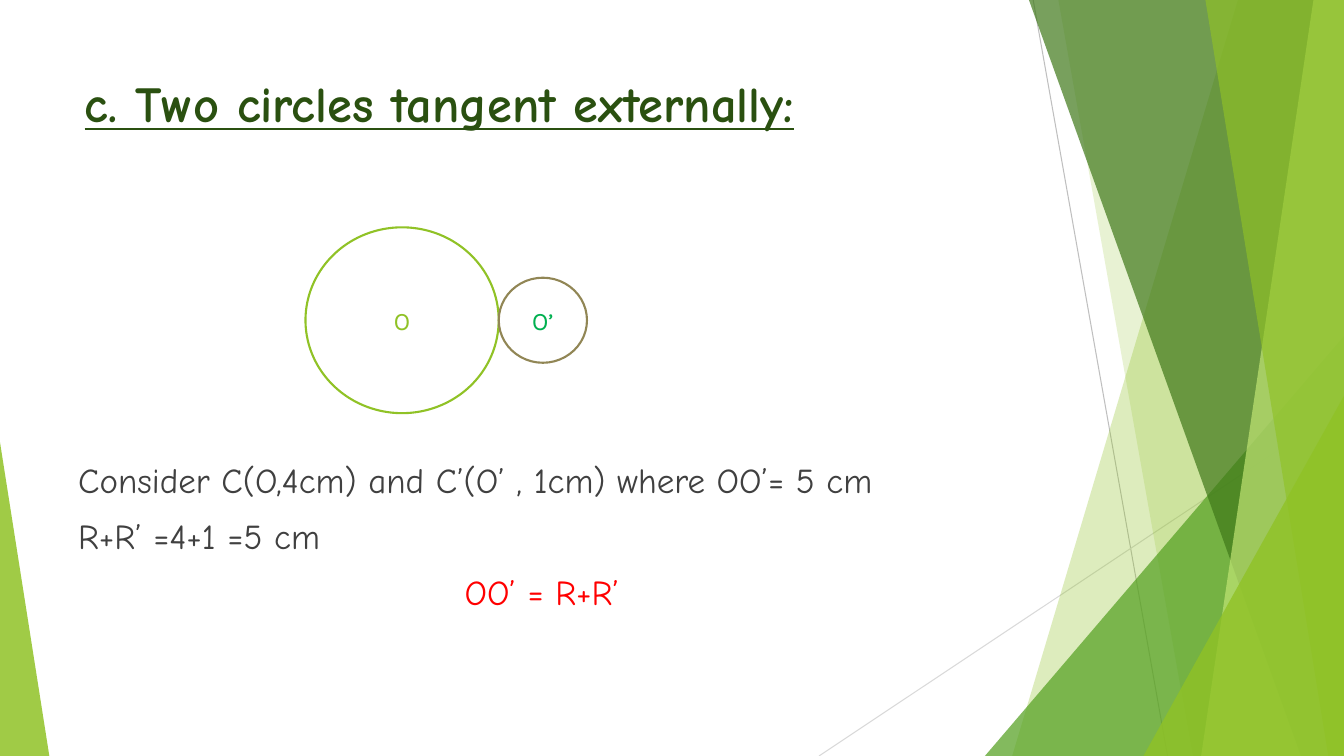
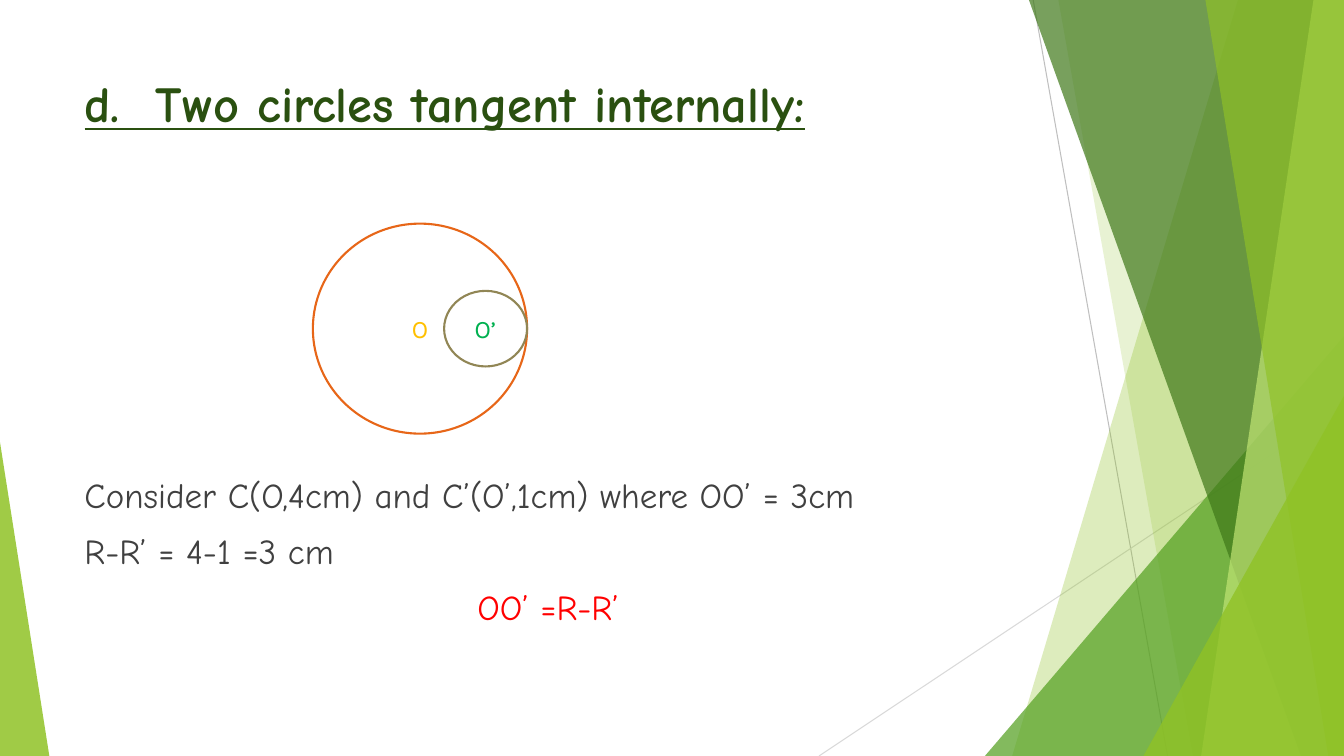
from lxml.etree import SubElement
from pptx import Presentation
from pptx.dml.color import RGBColor
from pptx.enum.shapes import MSO_CONNECTOR, MSO_SHAPE
from pptx.enum.text import MSO_ANCHOR, MSO_AUTO_SIZE, PP_ALIGN
from pptx.oxml.ns import qn
from pptx.util import Pt

PX = 9525  # EMU in one px, 96 px to the inch
WIDTH, HEIGHT = 1280, 720
TITLE_ONLY = 5

COLORS = {
    "white": "FFFFFF", "lime": "90C226", "green": "54A021", "forest": "3F7819",
    "pale": "C0E474", "title": "2A5010", "body": "404040", "result": "FF0000",
    "gray": "BFBFBF", "light gray": "D9D9D9", "olive": "918655",
    "orange": "E76618", "amber": "FFC000", "emerald": "00B050",
}
HAND_FONT, LABEL_FONT = "Comic Neue", "Karla"


def color(name):
    return RGBColor.from_string(COLORS[name])


def write_text(paragraph, text, font=HAND_FONT, size=25, ink="body",
               bold=False, underline=False, align=PP_ALIGN.LEFT, before=0):
    paragraph.alignment = align
    paragraph.space_before = Pt(before)
    run = paragraph.add_run()
    run.text = text
    run.font.name = font
    run.font.size = Pt(size)
    run.font.bold = bold
    run.font.underline = underline
    run.font.color.rgb = color(ink)


class Deck:
    """Holds the style and the current slide."""

    def __init__(self):
        self.presentation = Presentation()
        self.presentation.slide_width = WIDTH * PX
        self.presentation.slide_height = HEIGHT * PX
        self.layout = self.presentation.slide_layouts[TITLE_ONLY]
        self.slide = None

    def add_slide(self, title):
        self.slide = self.presentation.slides.add_slide(self.layout)
        self.title(title)

    def place(self, shape, left, top, width, height):
        shape.left, shape.top = left * PX, top * PX
        shape.width, shape.height = width * PX, height * PX

    def title(self, text):
        shape = self.slide.shapes.title
        self.place(shape, 71, 64, 902, 138)
        frame = shape.text_frame
        frame.vertical_anchor = MSO_ANCHOR.TOP
        frame.auto_size = MSO_AUTO_SIZE.NONE
        write_text(frame.paragraphs[0], text, size=36, ink="title",
                   bold=True, underline=True)

    # Shared decoration
    def line(self, start, end, ink):
        connector = self.slide.shapes.add_connector(
            MSO_CONNECTOR.STRAIGHT, *(value * PX for value in start + end))
        connector.line.color.rgb = color(ink)
        connector.line.width = Pt(0.75)
        SubElement(connector.element.spPr, qn("a:effectLst"))
        self.share(connector)

    def band(self, top_x, bottom_x, ink, opacity):
        """Area from a slanted edge to the right side of the slide."""
        builder = self.slide.shapes.build_freeform(top_x, 0, scale=PX)
        builder.add_line_segments(
            [(WIDTH, 0), (WIDTH, HEIGHT), (bottom_x, HEIGHT)], close=True)
        self.tint(builder.convert_to_shape(), ink, opacity)

    def corner(self, left, top, width, peak, ink, opacity):
        """Right triangle that stands on the bottom edge."""
        shape = self.slide.shapes.add_shape(
            MSO_SHAPE.ISOSCELES_TRIANGLE, left * PX, top * PX,
            width * PX, (HEIGHT - top) * PX)
        shape.adjustments[0] = peak
        self.tint(shape, ink, opacity)

    def tint(self, shape, ink, opacity):
        shape.shadow.inherit = False
        shape.line.fill.background()
        shape.fill.solid()
        shape.fill.fore_color.rgb = color(ink)
        tone = shape.element.spPr.find(qn("a:solidFill"))[0]
        SubElement(tone, qn("a:alpha"), val=str(opacity * 1000))
        self.share(shape)

    def share(self, shape):
        """Move a shape to the layout, so that every slide shows it."""
        self.layout.shapes.element.append(shape.element)

    def decorate(self):
        self.line((984, 0), (1112, HEIGHT), "gray")
        self.line((WIDTH, 387), (780, HEIGHT), "light gray")
        self.band(1179, 964, "lime", 30)
        self.band(1008, 1136, "lime", 20)
        self.corner(938, 320, 342, 1, "green", 72)
        self.band(980, 1239, "forest", 70)
        self.band(1251, 1144, "pale", 70)
        self.band(1148, 1265, "lime", 65)
        self.corner(1089, 377, 191, 1, "lime", 80)
        self.corner(0, 421, 47, 0, "lime", 85)

    # Slide content
    def circle(self, left, middle, size, label, outline, ink):
        width, height = size
        shape = self.slide.shapes.add_shape(
            MSO_SHAPE.FLOWCHART_CONNECTOR, left * PX,
            round((middle - height / 2) * PX), width * PX, height * PX)
        shape.shadow.inherit = False
        shape.fill.solid()
        shape.fill.fore_color.rgb = color("white")
        shape.line.color.rgb = color(outline)
        shape.line.width = Pt(1.5)
        frame = shape.text_frame
        frame.vertical_anchor = MSO_ANCHOR.MIDDLE
        write_text(frame.paragraphs[0], label, font=LABEL_FONT, size=18,
                   ink=ink, align=PP_ALIGN.CENTER)

    def tangent_circles(self, touch, middle, large, small, outline, ink, inside):
        """Two circles that meet at x = touch on one horizontal axis."""
        self.circle(touch - large[0], middle, large, "O", outline, ink)
        small_left = touch - small[0] if inside else touch
        self.circle(small_left, middle, small, "O’", "olive", "emerald")

    def reasoning(self, left, top, given, working, result):
        box = self.slide.shapes.add_textbox(
            left * PX, top * PX, 902 * PX, 170 * PX)
        frame = box.text_frame
        frame.word_wrap = True
        frame.margin_top = 0
        write_text(frame.paragraphs[0], given)
        write_text(frame.add_paragraph(), working, before=10)
        write_text(frame.add_paragraph(), result, ink="result",
                   align=PP_ALIGN.CENTER, before=10)


def main():
    deck = Deck()

    # External tangency
    deck.add_slide("c. Two circles tangent externally:")
    deck.decorate()
    deck.tangent_circles(475, 305, (184, 177), (84, 81), "lime", "lime",
                         inside=False)
    deck.reasoning(65, 437, "Consider C(O,4cm) and C’(O’ , 1cm) where OO’= 5 cm",
                   "R+R’ =4+1 =5 cm", "OO’ = R+R’")

    # Internal tangency
    deck.add_slide("d.  Two circles tangent internally:")
    deck.tangent_circles(502, 313, (204, 200), (79, 72), "orange", "amber",
                         inside=True)
    deck.reasoning(71, 451, "Consider C(O,4cm) and C’(O’,1cm) where OO’ = 3cm",
                   "R-R’ = 4-1 =3 cm", "OO’ =R-R’")

    deck.presentation.save("out.pptx")


if __name__ == "__main__":
    main()
